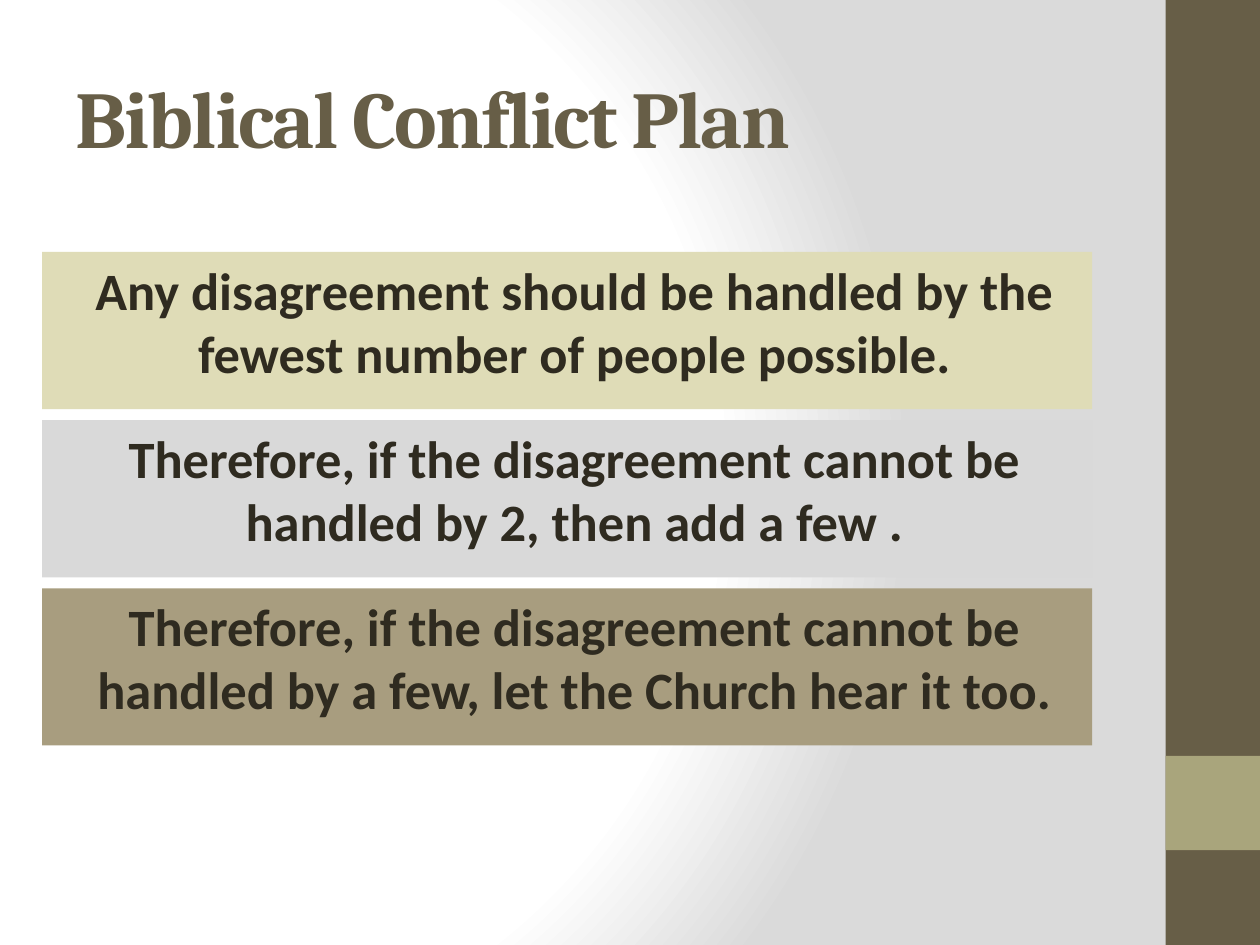
from pptx import Presentation
from pptx.dml.color import RGBColor
from pptx.enum.shapes import MSO_SHAPE
from pptx.enum.text import MSO_ANCHOR, PP_ALIGN
from pptx.oxml import parse_xml
from pptx.oxml.ns import nsdecls
from pptx.util import Cm, Pt

COLORS = {
    "brown": "675E47",
    "olive": "A9A57C",
    "ink": "2F2B20",
    "cream": "DFDCB7",
    "gray": "D9D9D9",
    "tan": "A89D7F",
    "white": "FFFFFF",
    "edge": "DADADA",
}
STATEMENTS = [
    ("cream", "Any disagreement should be handled by the fewest number of people possible."),
    ("gray", "Therefore, if the disagreement cannot be handled by 2, then add a few ."),
    ("tan", "Therefore, if the disagreement cannot be handled by a few, let the Church hear it too."),
]


class PlanPage:
    title_font = {"name": "Cambria", "size": Pt(46), "bold": True}
    band_font = {"name": "Calibri", "size": Pt(30), "bold": True}

    def __init__(self, deck):
        self.page = deck.slides.add_slide(deck.slide_layouts[5])

    def color(self, name):
        return RGBColor.from_string(COLORS[name])

    def add_span(self, para, text, font, color):
        span = para.add_run()
        span.text = text
        for name, value in font.items():
            setattr(span.font, name, value)
        span.font.color.rgb = self.color(color)
        return span

    def background(self, stops):
        marks = "".join(
            f'<a:gs pos="{place * 1000}"><a:srgbClr val="{COLORS[name]}"/></a:gs>'
            for place, name in stops
        )
        fill = parse_xml(
            f'<p:bg {nsdecls("p", "a")}><p:bgPr><a:gradFill rotWithShape="1">'
            f"<a:gsLst>{marks}</a:gsLst>"
            '<a:path path="circle">'
            '<a:fillToRect l="20000" t="50000" r="100000" b="50000"/>'
            "</a:path></a:gradFill><a:effectLst/></p:bgPr></p:bg>"
        )
        self.page.element.cSld.insert(0, fill)

    def title(self, text, left, top, width, height):
        box = self.page.shapes.title
        place = {"left": left, "top": top, "width": width, "height": height}
        for name, value in place.items():
            setattr(box, name, Cm(value))
        box.text_frame.vertical_anchor = MSO_ANCHOR.MIDDLE
        para = box.text_frame.paragraphs[0]
        para.alignment = PP_ALIGN.LEFT
        span = self.add_span(para, text, self.title_font, "brown")
        span.font._element.set("spc", "-100")

    def block(self, fill, left, top, width, height):
        box = self.page.shapes.add_shape(
            MSO_SHAPE.RECTANGLE, Cm(left), Cm(top), Cm(width), Cm(height)
        )
        box.shadow.inherit = False
        box.fill.solid()
        box.fill.fore_color.rgb = self.color(fill)
        box.line.fill.background()
        return box

    def band(self, text, fill, left, top, width, height):
        frame = self.block(fill, left, top, width, height).text_frame
        frame.word_wrap = True
        frame.vertical_anchor = MSO_ANCHOR.TOP
        para = frame.paragraphs[0]
        para.alignment = PP_ALIGN.CENTER
        layout = para._p.get_or_add_pPr()
        layout.set("marL", str(Cm(0.3)))
        layout.append(parse_xml(
            f'<a:spcBef {nsdecls("a")}><a:spcPct val="20000"/></a:spcBef>'
        ))
        self.add_span(para, text, self.band_font, "ink")


def main():
    deck = Presentation()
    deck.slide_width, deck.slide_height = Cm(25.4), Cm(19.05)
    plan = PlanPage(deck)
    plan.background([(0, "white"), (75, "white"), (100, "edge")])
    plan.block("brown", 23.5, 0, 1.9, 19.05)
    plan.block("olive", 23.5, 15.24, 1.9, 1.9)
    plan.title("Biblical Conflict Plan", 1.27, 0.76, 21.17, 3.18)
    for row, (fill, text) in enumerate(STATEMENTS):
        plan.band(text, fill, 0.85, 5.08 + row * 3.39, 21.17, 3.17)
    deck.save("out.pptx")


if __name__ == "__main__":
    main()
